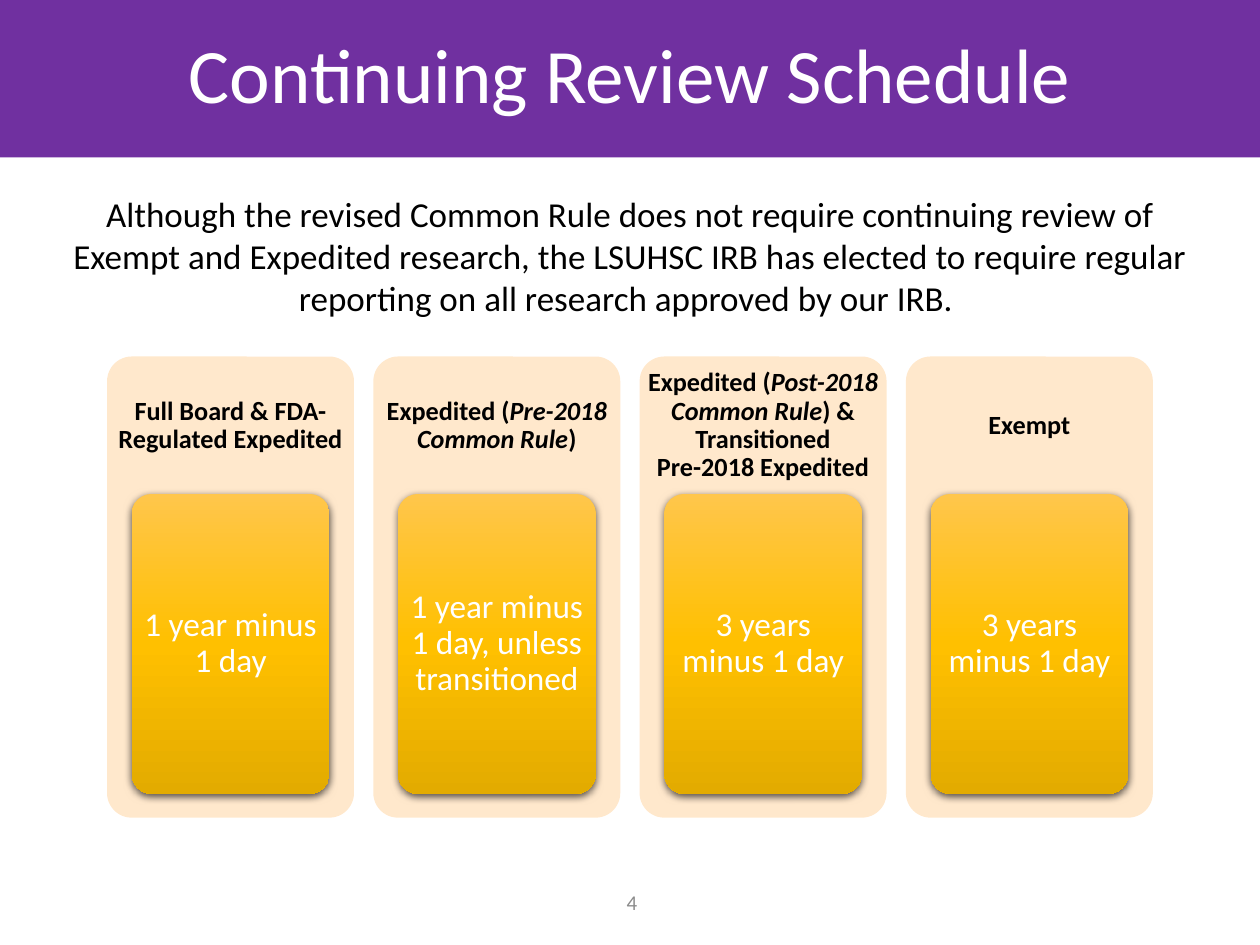
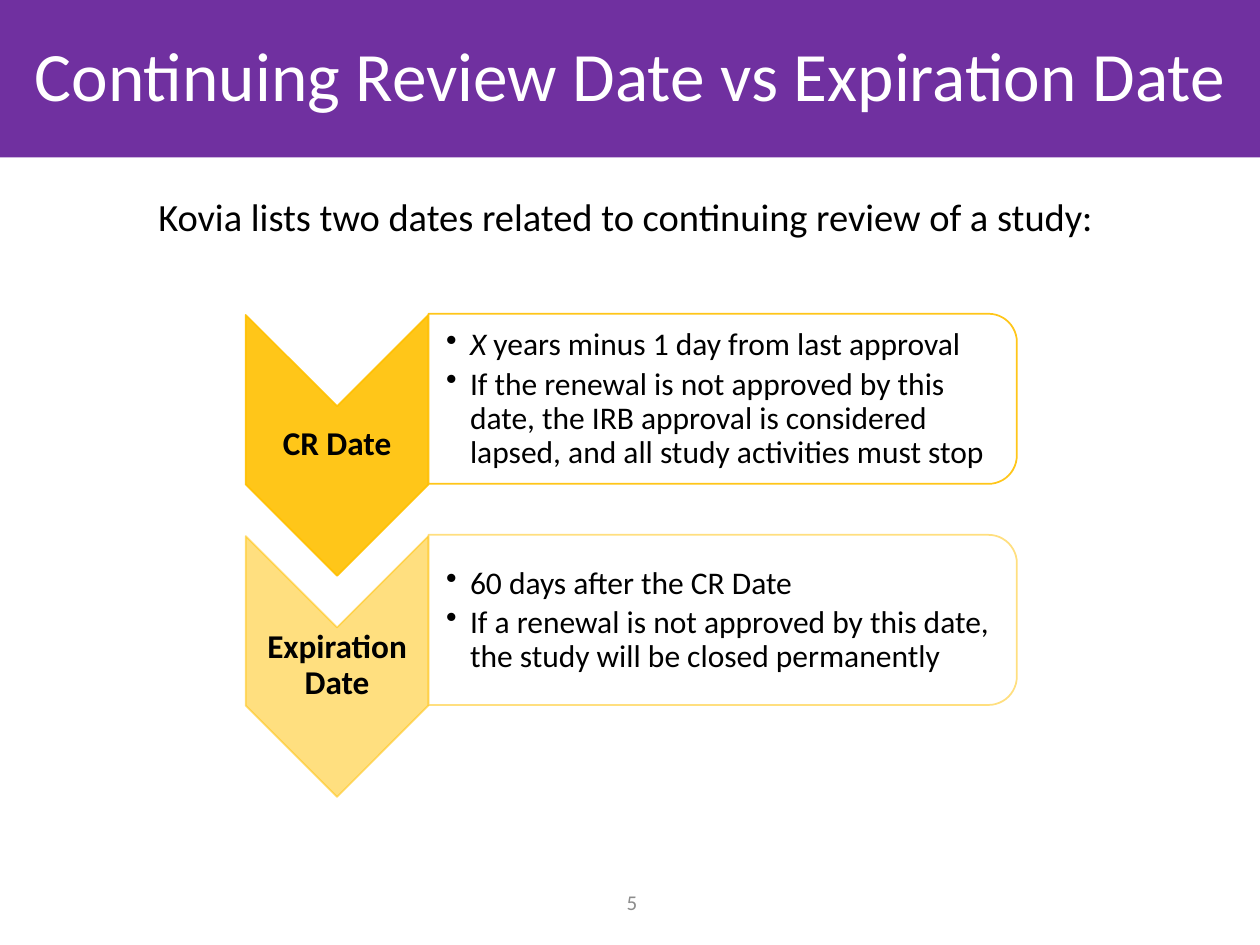
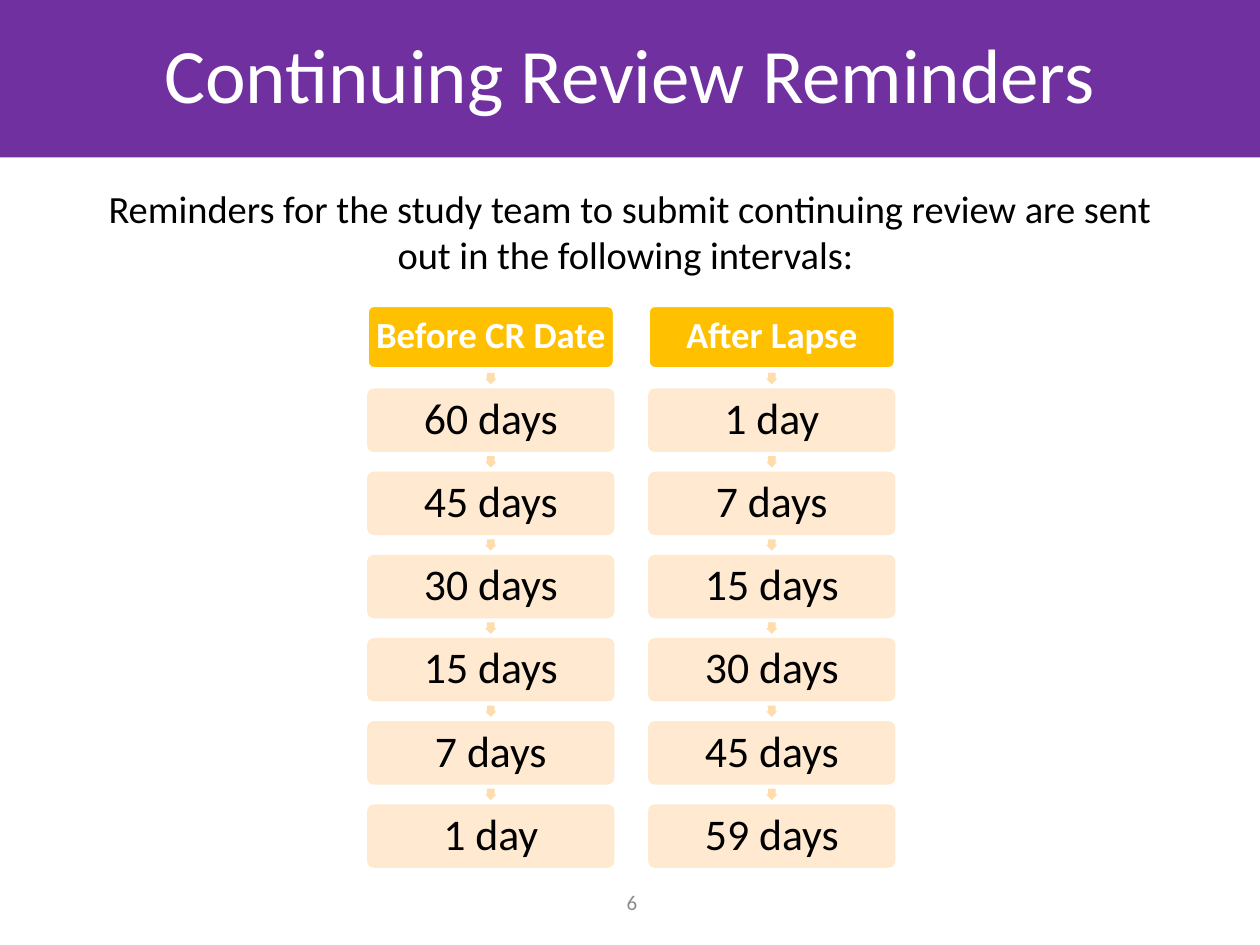
from pptx import Presentation
from pptx.dml.color import RGBColor
from pptx.enum.shapes import MSO_SHAPE as SHAPE
from pptx.enum.text import MSO_ANCHOR as ANCHOR, MSO_AUTO_SIZE as AUTO, PP_ALIGN as ALIGN
from pptx.oxml import parse_xml
from pptx.oxml.ns import nsdecls, qn
from pptx.util import Inches, Pt
from lxml import etree

W, H = 10, 7.5
PURPLE, GOLD, CREAM, PEACH = "7030A0", "FFC000", "FFE8CC", "FFDCAB"
WHITE, BLACK, GREY = "FFFFFF", "000000", "8C8C8C"
rgb = RGBColor.from_string

GRADIENT = f"""<a:gradFill {nsdecls('a')} rotWithShape="1"><a:gsLst>
  <a:gs pos="0"><a:srgbClr val="FFC64B"/></a:gs>
  <a:gs pos="50000"><a:srgbClr val="FFC000"/></a:gs>
  <a:gs pos="100000"><a:srgbClr val="E3AB00"/></a:gs>
</a:gsLst><a:lin ang="5400000" scaled="0"/></a:gradFill>"""
SHADOW = f"""<a:outerShdw {nsdecls('a')} blurRad="57150" dist="19050" dir="5400000"
  algn="ctr" rotWithShape="0"><a:srgbClr val="000000"><a:alpha val="63000"/></a:srgbClr></a:outerShdw>"""


def draw(s, kind, at, fill, line=None, opacity=100, rotation=0, adjust=()):
    sp = s.shapes.add_shape(kind, *map(Inches, at))
    sp.shadow.inherit = False
    sp.rotation = rotation
    for i, value in enumerate(adjust):
        sp.adjustments[i] = value
    sp.fill.solid()
    sp.fill.fore_color.rgb = rgb(fill)
    if line:
        sp.line.color.rgb = rgb(line)
        sp.line.width = Pt(1)
    else:
        sp.line.fill.background()
    if opacity < 100:
        for color in sp._element.spPr.iter(qn("a:srgbClr")):
            etree.SubElement(color, qn("a:alpha"), val=str(opacity * 1000))
    return sp


def write(sp, texts, size, color=BLACK, bold=False, align=ALIGN.CENTER, anchor=ANCHOR.MIDDLE,
          insets=(0.1, 0.05, 0.1, 0.05), spacing=0.9, bullets=False):
    """Fill a shape with paragraphs; text between asterisks is italic."""
    tf = sp.text_frame
    frame = dict(word_wrap=True, auto_size=AUTO.NONE, vertical_anchor=anchor)
    frame.update(zip(("margin_left", "margin_top", "margin_right", "margin_bottom"),
                     map(Inches, insets)))
    for name, value in frame.items():
        setattr(tf, name, value)
    for i, text in enumerate(texts):
        p = tf.add_paragraph() if i else tf.paragraphs[0]
        if bullets:
            pPr = p._p.get_or_add_pPr()
            pPr.set("marL", str(Inches(0.19)))
            pPr.set("indent", str(-Inches(0.19)))
            etree.SubElement(pPr, qn("a:buChar"), char="•")
            p.space_after = Pt(3)
        p.alignment, p.line_spacing = align, spacing
        for j, part in enumerate(text.split("*")):
            for k, piece in enumerate(part.split("\n")):
                if k:
                    p.add_line_break()
                if piece:
                    r = p.add_run()
                    r.text = piece
                    r.font.color.rgb = rgb(color)
                    font = dict(name="Calibri", size=Pt(size), bold=bold, italic=j % 2 == 1)
                    for name, value in font.items():
                        setattr(r.font, name, value)


prs = Presentation()
prs.slide_width, prs.slide_height = Inches(W), Inches(H)

# Title band, introduction and page number of every slide
pages = [
    ("Continuing Review Schedule", 44, (0.39, 1.48, 9.22, 1.11), 20,
     "Although the revised Common Rule does not require continuing review of Exempt and "
     "Expedited research, the LSUHSC IRB has elected to require regular reporting on all "
     "research approved by our IRB. "),
    ("Continuing Review Date vs Expiration Date", 39.6, (0.39, 1.48, 9.22, 0.47), 22,
     "Kovia lists two dates related to continuing review of a study: "),
    ("Continuing Review Reminders", 44, (0.53, 1.42, 8.94, 0.84), 22,
     "Reminders for the study team to submit continuing review are sent out in the "
     "following intervals: "),
]
slides = []
for number, (title, title_size, intro_at, intro_size, intro) in enumerate(pages, 4):
    s = prs.slides.add_slide(prs.slide_layouts[5])
    band = s.shapes.title
    band.left, band.top, band.width, band.height = 0, 0, Inches(W), Inches(H / 6)
    band.fill.solid()
    band.fill.fore_color.rgb = rgb(PURPLE)
    write(band, [title], title_size, WHITE)
    page_box = s.shapes.add_textbox(*map(Inches, (4.68, 6.96, 0.67, 0.4)))
    write(page_box, [str(number)], 12, GREY, spacing=1)
    intro_box = s.shapes.add_textbox(*map(Inches, intro_at))
    write(intro_box, [intro], intro_size, anchor=ANCHOR.TOP, spacing=1)
    slides.append(s)
schedule, dates, reminders = slides

# Review schedule: four columns, each with a gold card
columns = [
    ("Full Board & FDA-Regulated Expedited", "1 year minus 1 day"),
    ("Expedited (*Pre-2018 Common Rule*)", "1 year minus 1 day, unless transitioned"),
    ("Expedited (*Post-2018 Common Rule*) & Transitioned\nPre-2018 Expedited",
     "3 years minus 1 day"),
    ("Exempt", "3 years minus 1 day"),
]
margin, col_w, col_top = 0.85, 1.96, 2.83
col_step = (W - 2 * margin - col_w) / (len(columns) - 1)
for i, (heading, period) in enumerate(columns):
    left = margin + i * col_step
    draw(schedule, SHAPE.ROUNDED_RECTANGLE, (left, col_top, col_w, 3.66), CREAM, adjust=[0.1])
    head = schedule.shapes.add_textbox(*map(Inches, (left, col_top, col_w, 1.1)))
    write(head, [heading], 15, bold=True, insets=[0.06] * 4)
    card = draw(schedule, SHAPE.ROUNDED_RECTANGLE,
                (left + col_w * 0.1, 3.92, col_w * 0.8, 2.38), GOLD, adjust=[0.1])
    spPr = card._element.spPr
    spPr.replace(spPr.find(qn("a:solidFill")), parse_xml(GRADIENT))
    spPr.find(qn("a:effectLst")).append(parse_xml(SHADOW))
    write(card, [period], 19, WHITE, insets=(0.05, 0.04, 0.05, 0.04))

# Two dates: a downward chevron and a panel in each row
rows = [
    ("CR Date", 90, ["*X* years minus 1 day from last approval",
                     "If the renewal is not approved by this date, the IRB approval is "
                     "considered lapsed, and all study activities must stop"]),
    ("Expiration Date", 50, ["60 days after the CR Date",
                             "If a renewal is not approved by this date, the study will be "
                             "closed permanently"]),
]
for i, (label, opacity, points) in enumerate(rows):
    top = 2.5 + i * 1.755
    draw(dates, SHAPE.CHEVRON, (1.64, top + 0.31, 2.07, 1.45), GOLD, GOLD, opacity, 90)
    label_box = dates.shapes.add_textbox(*map(Inches, (1.95, top + 0.72, 1.45, 0.62)))
    write(label_box, [label], 19, bold=True, insets=[0.01] * 4)
    draw(dates, SHAPE.ROUND_2_SAME_RECTANGLE, (5.06, top - 1.67, 1.35, 4.67),
         WHITE, GOLD, opacity, 90)
    points_box = dates.shapes.add_textbox(*map(Inches, (3.4, top + 0.06, 4.61, 1.22)))
    write(points_box, points, 18, align=ALIGN.LEFT, insets=(0.14, 0.01, 0.01, 0.01), bullets=True)

# Reminders: two chains of cells joined by small arrows
chains = [
    ("Before CR Date", "60 days", "45 days", "30 days", "15 days", "7 days", "1 day"),
    ("After Lapse", "1 day", "7 days", "15 days", "30 days", "45 days", "59 days"),
]
cell_w, cell_h, arrow = 1.95, 0.49, 0.09
for col, chain in enumerate(chains):
    left = 2.92 + col * 2.23
    for row, text in enumerate(chain):
        top = 2.43 + row * 0.66
        at = (left, top, cell_w, cell_h)
        if row == 0:
            cell = draw(reminders, SHAPE.ROUNDED_RECTANGLE, at, GOLD, WHITE, adjust=[0.1])
            write(cell, [text], 21, WHITE, bold=True, insets=[0.03] * 4)
        else:
            draw(reminders, SHAPE.RIGHT_ARROW,
                 (left + (cell_w - arrow) / 2, top - 0.13, arrow, arrow),
                 PEACH, rotation=90, adjust=[0.67, 0.5])
            cell = draw(reminders, SHAPE.ROUNDED_RECTANGLE, at, CREAM, CREAM, 90, adjust=[0.1])
            write(cell, [text], 25, insets=[0.03] * 4)

prs.save("out.pptx")
